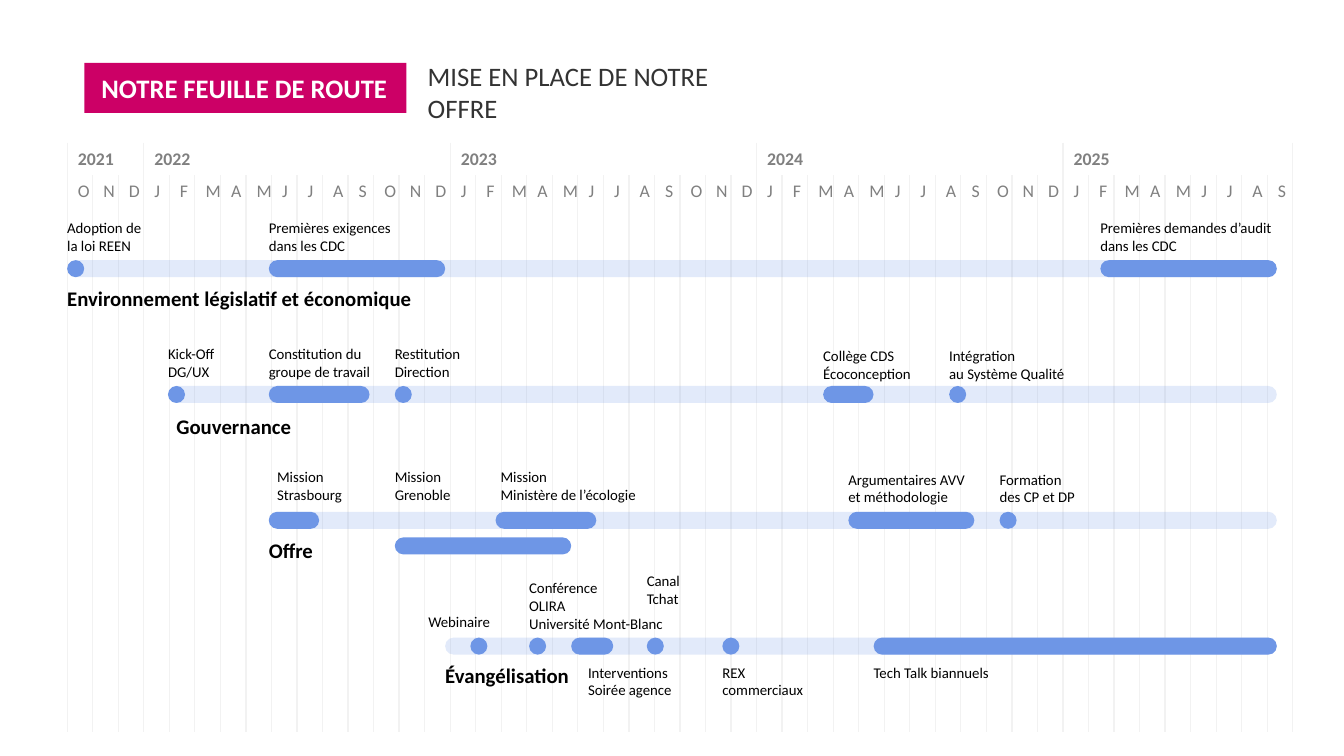
from lxml import etree
from pptx import Presentation
from pptx import util as u
from pptx.dml.color import RGBColor
from pptx.enum import shapes, text
from pptx.oxml import ns

PINK = RGBColor(0xCC, 0x00, 0x66)
BLUE = RGBColor(0x6E, 0x96, 0xE6)
GRAY = RGBColor(0x80, 0x80, 0x80)
DARK = RGBColor(0x33, 0x33, 0x33)
BLACK = RGBColor(0x00, 0x00, 0x00)
WHITE = RGBColor(0xFF, 0xFF, 0xFF)
RULE = RGBColor(0xF2, 0xF2, 0xF2)
PLAIN = "{2D5ABB26-0587-4C30-8999-92F81FD0307C}"

LEFT, TOP, WIDTH = 0.63, 1.34, 11.49
SPAN, BAR = 48, 0.16
STEP = 11.34 / SPAN
LANE, GAP = 2.44, 1.18
MONTHS = "ONDJFMAMJJAS"
YEARS = [("2021", 3), ("2022", 12), ("2023", 12), ("2024", 12), ("2025", 9)]

LANES = [
    {"first": 0,
     "name": ("Environnement législatif et économique", 0, 0.16, 3.26),
     "bars": [(0, 0), (8, 7), (41, 7)],
     "notes": [("Premières exigences\ndans les CDC", 8, -0.47, 1.2),
               ("Premières demandes d’audit\ndans les CDC", 41, -0.47, 1.64)]},
    {"first": 4,
     "name": ("Gouvernance", 4.33, 0.18, 1.08),
     "bars": [(4, 0), (8, 4), (13, 0), (30, 2), (35, 0)],
     "notes": [("Kick-Off\nDG/UX", 4, -0.47, 0.45),
               ("Constitution du\ngroupe de travail", 8, -0.47, 0.97),
               ("Restitution\nDirection", 13, -0.47, 0.63),
               ("Collège CDS\nÉcoconception", 30, -0.45, 0.84),
               ("Intégration\nau Système Qualité", 35, -0.45, 1.1)]},
    {"first": 8,
     "name": ("Offre", 8, 0.16, 0.42),
     "bars": [(8, 2), (17, 4), (31, 5), (37, 0)],
     "notes": [("Mission\nStrasbourg", 8.33, -0.49, 0.62),
               ("Mission\nGrenoble", 13, -0.49, 0.53),
               ("Mission\nMinistère de l’écologie", 17.2, -0.49, 1.3),
               ("Argumentaires AVV\net méthodologie", 31, -0.47, 1.11),
               ("Formation\ndes CP et DP", 37, -0.47, 0.73)]},
    {"first": 15,
     "name": ("Évangélisation", 15, 0.16, 1.18),
     "bars": [(16, 0), (18.33, 0), (20, 1.67), (23, 0), (26, 0), (32, 16)],
     "notes": [("Webinaire", 14.33, -0.31, 0.59),
               ("Conférence\nOLIRA\nUniversité Mont-Blanc", 18.33, -0.63, 1.28),
               ("Canal\nTchat", 23, -0.7, 0.37),
               ("Interventions\nSoirée agence", 20.67, 0.16, 0.8),
               ("REX\ncommerciaux", 26, 0.16, 0.77),
               ("Tech Talk biannuels", 32, 0.16, 1.11)]},
]


def month(n):
    return LEFT + n * STEP


def apply(item, values):
    for key, value in values.items():
        setattr(item, key, value)


class Board:
    face = "Calibri"

    def __init__(self, slide):
        self.slide = slide

    def words(self, frame, copy, size, color, bold=False):
        frame.text = copy
        for para in frame.paragraphs:
            para.alignment = text.PP_ALIGN.LEFT
            apply(para.font, {"name": self.face, "size": u.Pt(size), "bold": bold})
            para.font.color.rgb = color

    def shape(self, kind, box, color, alpha=None):
        item = self.slide.shapes.add_shape(kind, *map(u.Inches, box))
        item.shadow.inherit = False
        item.fill.solid()
        item.fill.fore_color.rgb = color
        item.line.fill.background()
        if alpha:
            tone = item._element.spPr.find(".//" + ns.qn("a:srgbClr"))
            etree.SubElement(tone, ns.qn("a:alpha")).set("val", str(alpha * 1000))
        return item

    def bar(self, start, count, top, alpha=None):
        box = (month(start), top, count * STEP or BAR, BAR)
        item = self.shape(shapes.MSO_SHAPE.ROUNDED_RECTANGLE, box, BLUE, alpha)
        item.adjustments[0] = 0.5

    def label(self, copy, start, top, width, size=10, bold=False, wrap=False):
        lines = copy.count("\n") + 1 + wrap
        box = (month(start), top, width, 0.08 + lines * size * 0.017)
        frame = self.slide.shapes.add_textbox(*map(u.Inches, box)).text_frame
        apply(frame, {"margin_left": 0, "margin_right": 0, "margin_bottom": 0,
                      "margin_top": u.Inches(0.08), "word_wrap": wrap,
                      "auto_size": text.MSO_AUTO_SIZE.SHAPE_TO_FIT_TEXT})
        self.words(frame, copy, size, BLACK, bold)

    def head(self, item, copy, color, bold, wrap):
        frame = item.text_frame
        apply(frame, {"margin_left": u.Inches(0.16), "margin_right": u.Inches(0.16),
                      "margin_top": u.Inches(0.1), "margin_bottom": u.Inches(0.1),
                      "word_wrap": wrap,
                      "vertical_anchor": text.MSO_ANCHOR.MIDDLE})
        self.words(frame, copy, 18, color, bold)

    def edges(self, cell):
        cell.fill.background()
        props = cell._tc.get_or_add_tcPr()
        for spot, side in enumerate("LR"):
            line = etree.Element(ns.qn("a:ln" + side), w="12700")
            fill = etree.SubElement(line, ns.qn("a:solidFill"))
            etree.SubElement(fill, ns.qn("a:srgbClr"), val=str(RULE))
            props.insert(spot, line)

    def grid(self):
        rows = (0.3, 0.3, 4.92)
        box = (LEFT, TOP, WIDTH, sum(rows))
        item = self.slide.shapes.add_table(3, SPAN, *map(u.Inches, box))
        table = item.table
        apply(table, {"first_row": False, "horz_banding": False})
        table._tbl.tblPr.find(ns.qn("a:tableStyleId")).text = PLAIN
        for row, high in zip(table.rows, rows):
            row.height = u.Inches(high)
        for n, col in enumerate(table.columns):
            col.width = u.Inches(WIDTH / SPAN)
            self.words(table.cell(1, n).text_frame, MONTHS[n % 12], 12, GRAY)
        start = 0
        for year, count in YEARS:
            cell = table.cell(0, start)
            cell.merge(table.cell(0, start + count - 1))
            self.words(cell.text_frame, year, 12, GRAY, True)
            start += count
        for cell in table.iter_cells():
            if not cell.is_spanned:
                self.edges(cell)


def main():
    deck = Presentation()
    apply(deck, {"slide_width": u.Inches(12.6), "slide_height": u.Inches(7.09)})
    board = Board(deck.slides.add_slide(deck.slide_layouts[6]))
    board.grid()

    tag = board.shape(shapes.MSO_SHAPE.RECTANGLE, (0.79, 0.59, 3.02, 0.47), PINK)
    board.head(tag, "NOTRE FEUILLE DE ROUTE", WHITE, True, False)
    topic = board.slide.shapes.add_textbox(*map(u.Inches, (3.85, 0.65, 3.59, 0.42)))
    board.head(topic, "MISE EN PLACE DE NOTRE OFFRE", DARK, False, True)

    for n, lane in enumerate(LANES):
        top = LANE + n * GAP
        board.bar(lane["first"], SPAN - lane["first"], top, 20)
        for start, count in lane["bars"]:
            board.bar(start, count, top)
        for copy, start, shift, width in lane["notes"]:
            board.label(copy, start, top + shift, width)
        name, start, shift, width = lane["name"]
        board.label(name, start, top + shift, width, 14, True)
    board.bar(13, 7, 5.04)
    board.label("Adoption de la loi REEN", 0, LANE - 0.47, 0.71, wrap=True)
    deck.save("out.pptx")


if __name__ == "__main__":
    main()
